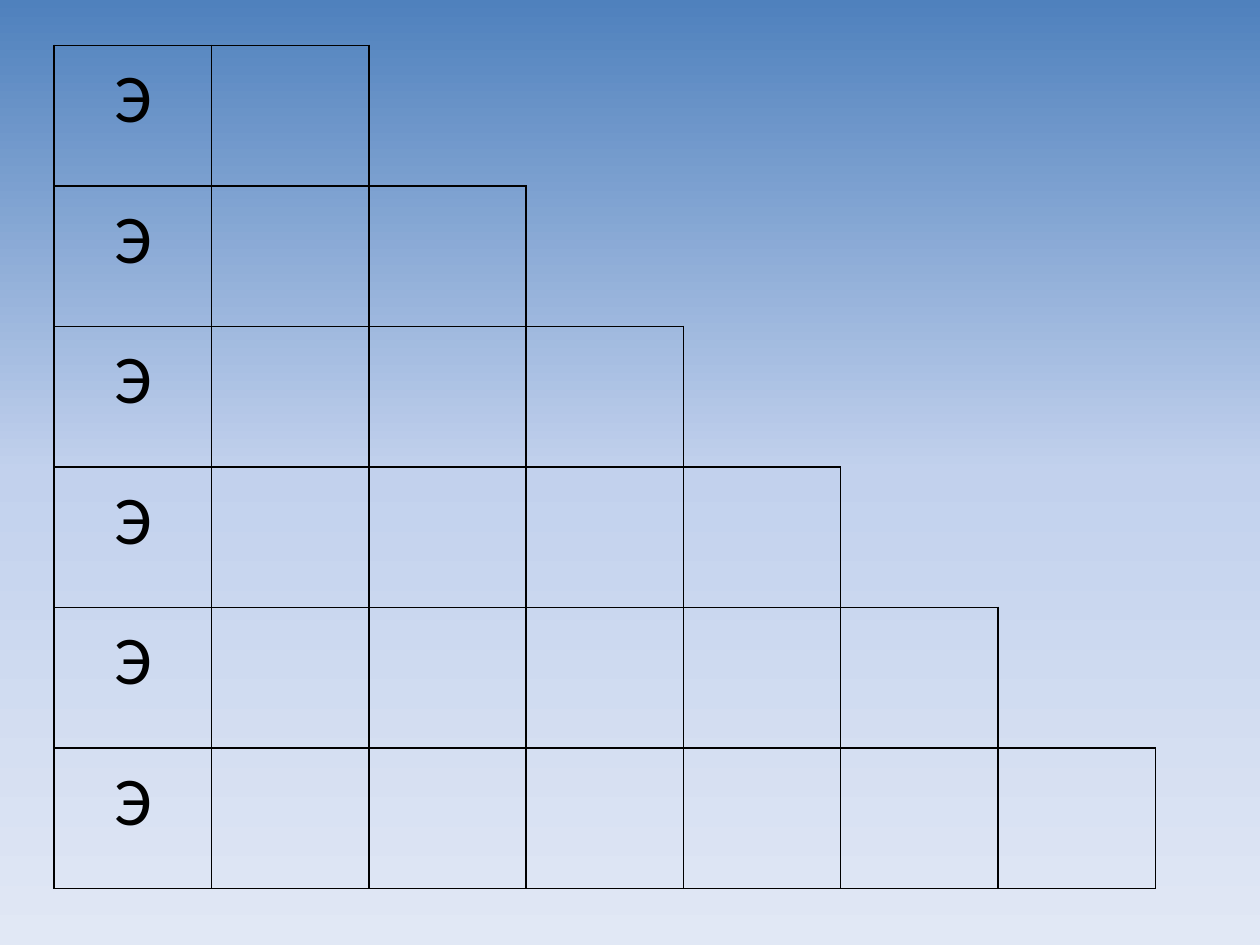
from copy import deepcopy

from lxml import etree
from pptx import Presentation
from pptx.dml.color import RGBColor
from pptx.enum.text import PP_ALIGN
from pptx.oxml.ns import qn
from pptx.util import Inches, Pt

CENTER = PP_ALIGN.CENTER
BLACK = RGBColor(0x00, 0x00, 0x00)
SKY = [
    (0, RGBColor(0x4F, 0x81, 0xBD)),
    (0.5, RGBColor(0xC2, 0xD1, 0xED)),
    (1, RGBColor(0xE1, 0xE8, 0xF5)),
]
ROWS, COLS = 6, 7


def set_borders(cell, drawn):
    tc_pr = cell._tc.get_or_add_tcPr()
    for side in "LRTB":
        ln = etree.SubElement(tc_pr, qn(f"a:ln{side}"), w=str(Pt(1)))
        if side in drawn:
            fill = etree.SubElement(ln, qn("a:solidFill"))
            etree.SubElement(fill, qn("a:srgbClr"), val=str(BLACK))
        else:
            etree.SubElement(ln, qn("a:noFill"))


prs = Presentation()
prs.slide_width = Inches(10)
prs.slide_height = Inches(7.5)
s = prs.slides.add_slide(prs.slide_layouts[6])

sky = s.background.fill
sky.gradient()
sky.gradient_angle = 270
stop_list = s._element.find(".//" + qn("a:gsLst"))
stop_list.append(deepcopy(stop_list[-1]))
for stop, (position, color) in zip(sky.gradient_stops, SKY):
    stop.position = position
    stop.color.rgb = color

table = s.shapes.add_table(
    ROWS, COLS, Inches(0.43), Inches(0.36), Inches(8.74), Inches(6.69)
).table
table.first_row = False
table.horz_banding = False

for row in range(ROWS):
    for col in range(COLS):
        cell = table.cell(row, col)
        if col <= row + 1:
            drawn = "LRTB"
        elif col == row + 2:
            drawn = "LB"
        else:
            drawn = ""
        set_borders(cell, drawn)
        cell.fill.background()

    cell = table.cell(row, 0)
    cell.margin_left = cell.margin_right = Inches(0.04)
    cell.margin_top = cell.margin_bottom = 0
    p = cell.text_frame.paragraphs[0]
    p.alignment = CENTER
    p.line_spacing = 1.15
    r = p.add_run()
    r.text = "Э"
    r.font.name = "Calibri"
    r.font.size = Pt(39)
    r.font.color.rgb = BLACK

prs.save("out.pptx")
